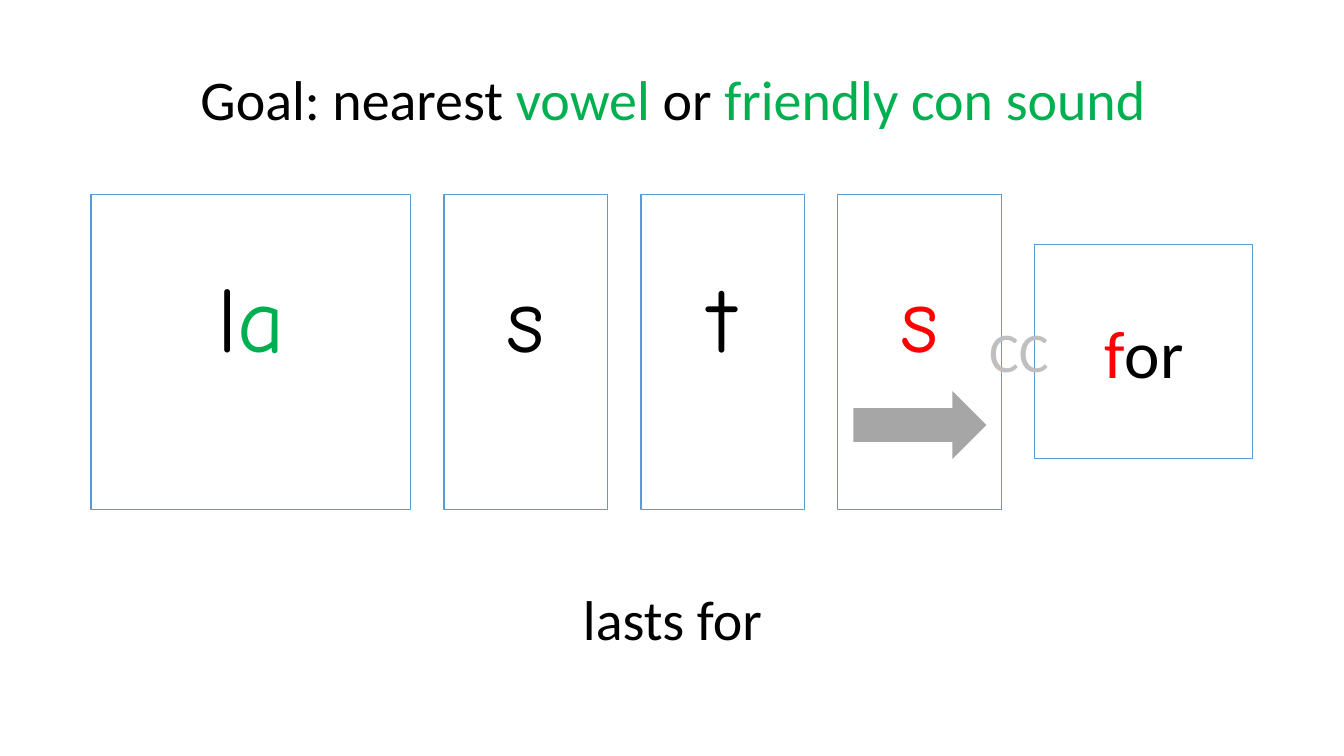
from pptx import Presentation
from pptx.dml.color import RGBColor
from pptx.enum.shapes import MSO_SHAPE as Shape
from pptx.enum.text import MSO_ANCHOR as Anchor, MSO_AUTO_SIZE as Fit, PP_ALIGN as Align
from pptx.util import Pt

SCALE = 914400 / 100.8  # EMU in one px
WIDE, HIGH = 1344, 756
COLOURS = {"black": "000000", "green": "00B050", "red": "FF0000",
           "pale": "BFBFBF", "grey": "A6A6A6", "blue": "5B9BD5"}
PLAIN, ROUND = "Calibri", "Comic Neue"

GOAL = [("Goal: nearest ", "black"), ("vowel", "green"),
        (" or ", "black"), ("friendly con sound", "green")]
# width, height, font, size, runs
CARDS = [
    (320, 315, ROUND, 66, [("l", "black"), ("a", "green")]),
    (164, 315, ROUND, 66, [("s", "black")]),
    (164, 315, ROUND, 66, [("t", "black")]),
    (164, 315, ROUND, 66, [("s", "red")]),
    (218, 214, PLAIN, 48, [("f", "red"), ("or", "black")]),
]
# left, top, width, runs
LABELS = [
    (493, 579, 359, [("lasts for", "black")]),
    (918, 312, 202, [("CC", "pale")]),
]
LEFT, MIDDLE, GAP = 91, 352, 33
LABEL_HIGH, LABEL_SIZE, CARD_INSET = 78, 40, 66
ARROW_WIDE, ARROW_HIGH, ARROW_TOP = 133, 68, 391


def px(*sizes):
    return [round(size * SCALE) for size in sizes]


def tint(name):
    return RGBColor.from_string(COLOURS[name])


def write(shape, runs, font, size, inset=5):
    frame = shape.text_frame
    frame.word_wrap = True
    frame.auto_size = Fit.NONE
    frame.vertical_anchor = Anchor.TOP
    frame.margin_top, frame.margin_bottom = px(inset, 5)
    para = frame.paragraphs[0]
    para.alignment = Align.CENTER
    for text, colour in runs:
        run = para.add_run()
        run.text = text
        run.font.name, run.font.size = font, Pt(size)
        run.font.color.rgb = tint(colour)


def draw_card(left, wide, high):
    card = shapes.add_shape(Shape.RECTANGLE, *px(left, MIDDLE - high / 2, wide, high))
    card.shadow.inherit = False
    card.fill.background()
    card.line.color.rgb = tint("blue")
    card.line.width = Pt(0.75)
    return card


def draw_arrow(centre):
    arrow = shapes.add_shape(Shape.RIGHT_ARROW, *px(
        centre - ARROW_WIDE / 2, ARROW_TOP, ARROW_WIDE, ARROW_HIGH))
    arrow.shadow.inherit = False
    arrow.fill.solid()
    arrow.fill.fore_color.rgb = tint("grey")
    arrow.line.fill.background()


deck = Presentation()
deck.slide_width, deck.slide_height = px(WIDE, HIGH)
slide = deck.slides.add_slide(deck.slide_layouts[5])
shapes = slide.shapes

title = shapes.title
title.left, title.top, title.width, title.height = px(72, 59, 1202, LABEL_HIGH)
write(title, GOAL, PLAIN, LABEL_SIZE)

left = LEFT
for wide, high, font, size, runs in CARDS:
    write(draw_card(left, wide, high), runs, font, size, CARD_INSET)
    if runs == [("s", "red")]:
        draw_arrow(left + wide / 2)
    left += wide + GAP

for left, top, wide, runs in LABELS:
    label = shapes.add_textbox(*px(left, top, wide, LABEL_HIGH))
    write(label, runs, PLAIN, LABEL_SIZE)

deck.save("out.pptx")
